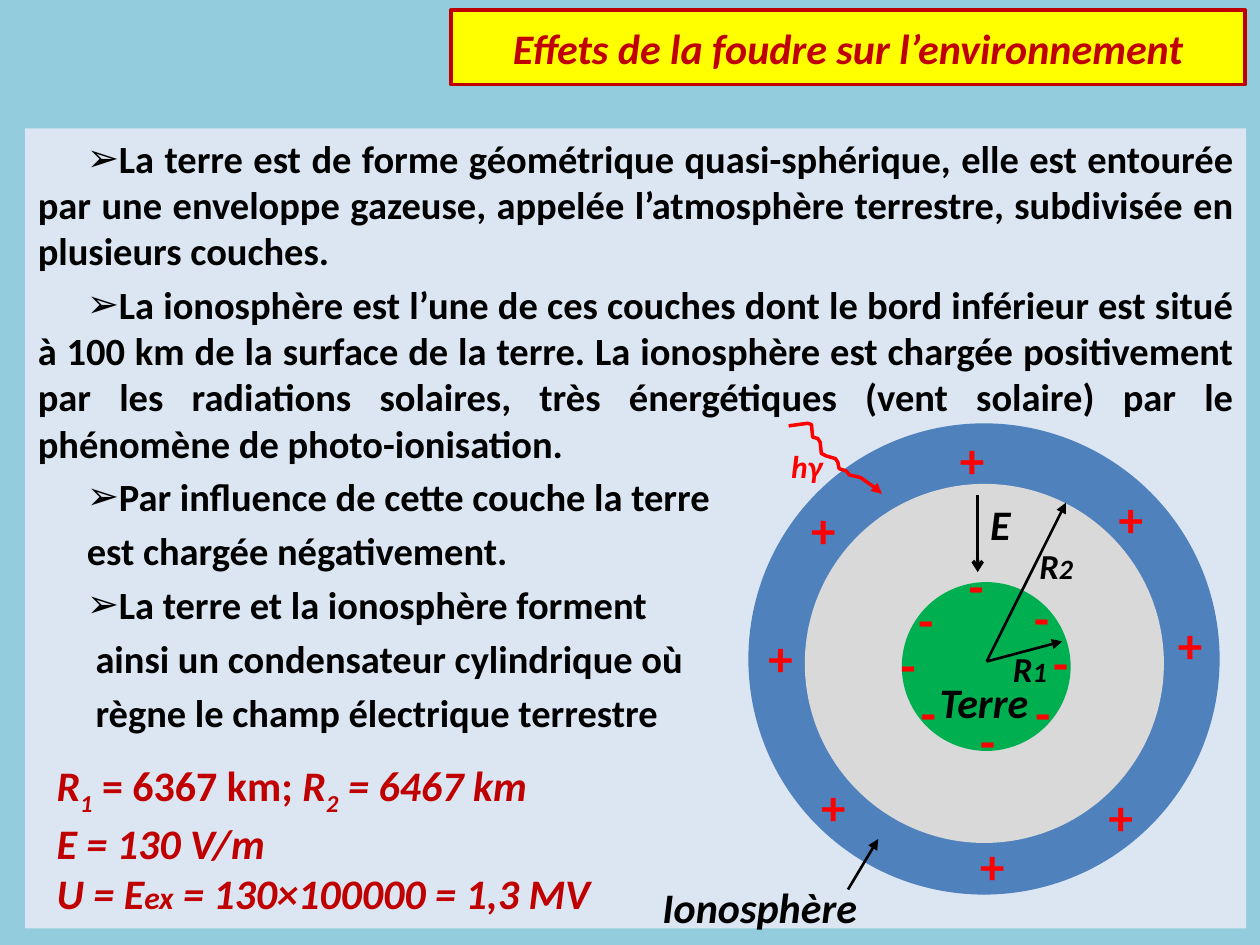
import pptx
import pptx.dml.color
import pptx.enum.shapes
import pptx.enum.text
import pptx.util
from lxml import etree
from pptx.oxml.ns import qn

Pt = pptx.util.Pt
RGBColor = pptx.dml.color.RGBColor
MSO_SHAPE = pptx.enum.shapes.MSO_SHAPE
PP_ALIGN = pptx.enum.text.PP_ALIGN
MSO_ANCHOR = pptx.enum.text.MSO_ANCHOR

SKY = RGBColor(0x93, 0xCD, 0xDD)
PANEL = RGBColor(0xDC, 0xE6, 0xF2)
YELLOW = RGBColor(0xFF, 0xFF, 0x00)
DARK_RED = RGBColor(0xC0, 0x00, 0x00)
RED = RGBColor(0xFF, 0x00, 0x00)
BLUE = RGBColor(0x4F, 0x81, 0xBD)
GREY = RGBColor(0xD9, 0xD9, 0xD9)
GREEN = RGBColor(0x00, 0xB0, 0x50)
BLACK = RGBColor(0x00, 0x00, 0x00)


def write(p, text, size=24, color=BLACK, italic=True, baseline=None):
    r = p.add_run()
    r.text = text
    r.font.name = "Calibri"
    r.font.size = Pt(size)
    r.font.bold = True
    r.font.italic = italic
    r.font.color.rgb = color
    if baseline:
        r.font._element.set("baseline", str(baseline * 1000))


def place(sp, x, y, w, h):
    sp.left, sp.top, sp.width, sp.height = Pt(x), Pt(y), Pt(w), Pt(h)
    tf = sp.text_frame
    tf.word_wrap = True
    tf.auto_size = pptx.enum.text.MSO_AUTO_SIZE.NONE
    return tf


prs = pptx.Presentation()
prs.slide_width, prs.slide_height = Pt(720), Pt(540)
s = prs.slides.add_slide(prs.slide_layouts[0])
s.background.fill.solid()
s.background.fill.fore_color.rgb = SKY

# Title
title = s.shapes.title
tf = place(title, 257.8, 5.8, 453.6, 42.5)
tf.vertical_anchor = MSO_ANCHOR.MIDDLE
title.fill.solid()
title.fill.fore_color.rgb = YELLOW
title.line.color.rgb = DARK_RED
title.line.width = Pt(2.25)
p = tf.paragraphs[0]
p.alignment = PP_ALIGN.CENTER
write(p, "Effets de la foudre sur l’environnement", color=DARK_RED)

# Body: bullet flag, first-line indent, text
body = s.placeholders[1]
tf = place(body, 14.4, 73.4, 697.7, 457.2)
body.fill.solid()
body.fill.fore_color.rgb = PANEL
lines = [
    (True, 28, "La terre est de forme géométrique quasi-sphérique, elle est entourée par une "
     "enveloppe gazeuse, appelée l’atmosphère terrestre, subdivisée en plusieurs couches."),
    (True, 28, "La ionosphère est l’une de ces couches dont le bord inférieur est situé à 100 km "
     "de la surface de la terre. La ionosphère est chargée positivement par les radiations "
     "solaires, très énergétiques (vent solaire) par le phénomène de photo-ionisation."),
    (True, 28, "Par influence de cette couche la terre"),
    (False, 28, "est chargée négativement."),
    (True, 28, "La terre et la ionosphère forment"),
    (False, 33, "ainsi un condensateur cylindrique où"),
    (False, 33, "règne le champ électrique terrestre"),
]
for i, (bullet, indent, text) in enumerate(lines):
    p = tf.add_paragraph() if i else tf.paragraphs[0]
    p.alignment = PP_ALIGN.JUSTIFY
    p.space_before = Pt(4.4)
    pPr = p._p.get_or_add_pPr()
    pPr.set("marL", "0")
    pPr.set("indent", str(Pt(indent)))
    if bullet:
        etree.SubElement(pPr, qn("a:buChar")).set("char", "➢")
    write(p, text, size=22, italic=False)

# Values: runs of text with their own format
values = [
    [("R", {}), ("1", {"baseline": -25}), (" = 6367 km; ", {"italic": False}),
     ("R", {}), ("2", {"baseline": -25}), (" = 6467 km", {})],
    [("E = 130 V/m", {})],
    [("U = E", {}), ("ex", {"size": 18}), (" = 130×100000 = 1,3 MV", {})],
]
tf = place(s.shapes.add_textbox(0, 0, 0, 0), 25.2, 430.6, 334.8, 94.3)
for i, runs in enumerate(values):
    p = tf.add_paragraph() if i else tf.paragraphs[0]
    for text, style in runs:
        write(p, text, color=DARK_RED, **style)

# Ionosphere, atmosphere and Earth: centre, diameter, colour
for cx, cy, d, color in [(562.3, 376.6, 269.3, BLUE), (562.5, 379.1, 205.2, GREY),
                         (563.6, 380.9, 96.5, GREEN)]:
    sp = s.shapes.add_shape(MSO_SHAPE.OVAL, Pt(cx - d / 2), Pt(cy - d / 2), Pt(d), Pt(d))
    sp.shadow.inherit = False
    sp.fill.solid()
    sp.fill.fore_color.rgb = color
    sp.line.fill.background()

# Solar ray
ray = [(450.7, 243.4), (456.5, 242.6), (461.5, 241.9), (463.7, 242.6), (464.4, 249.8),
       (467.3, 250.6), (468.7, 252.7), (469.4, 259.2), (472.3, 260.6), (477.4, 262.1),
       (478.8, 264.2), (479.5, 267.8), (483.8, 269.3), (485.3, 271.4), (491.8, 272.9),
       (496.8, 276.5), (501.1, 279.4), (504, 282.2)]
points = [(Pt(x), Pt(y)) for x, y in ray]
fb = s.shapes.build_freeform(*points[0])
fb.add_line_segments(points[1:], close=False)
sp = fb.convert_to_shape()
sp.shadow.inherit = False
sp.fill.background()
arrows = [(sp, RED, 2, "triangle")]

# Charges
plus = [(541.4, 241.9), (553, 473.8), (432, 355), (456.5, 282.2),
        (462.2, 439.9), (632.2, 275.8), (626.4, 445.7), (666, 347.8)]
minus = [(546.5, 313.9), (553, 402.5), (594.7, 357.8), (507.6, 359.3),
         (583.9, 331.9), (584.6, 386.6), (517.7, 333.4), (519.1, 386.6)]
for sign, spots in [("+", plus), ("-", minus)]:
    for x, y in spots:
        tf = place(s.shapes.add_textbox(0, 0, 0, 0), x, y, 45.4, 41)
        write(tf.paragraphs[0], sign, size=28, color=RED, italic=False)

# Labels: text, index, position, width, height, size, colour
labels = [
    ("hγ", "", 445, 252, 45.4, 28.8, 18, RED),
    ("Terre", "", 529.9, 383, 73.4, 36, 24, BLACK),
    ("Ionosphère", "", 371.5, 500.4, 158.4, 36, 24, BLACK),
    ("E", "", 558.7, 281.5, 33.8, 36, 24, BLACK),
    ("R", "2", 586.8, 307.4, 45.4, 31.7, 20, BLACK),
    ("R", "1", 571.7, 366.5, 45.4, 31.7, 20, BLACK),
]
for text, index, x, y, w, h, size, color in labels:
    p = place(s.shapes.add_textbox(0, 0, 0, 0), x, y, w, h).paragraphs[0]
    write(p, text, size=size, color=color)
    if index:
        write(p, index, size=16, color=color)

# Field, radii and ionosphere pointer
for x1, y1, x2, y2, width, head in [(558.7, 283, 558.7, 326.9, 2, "arrow"),
                                    (563.8, 378, 609.1, 287.3, 1.5, "triangle"),
                                    (563.8, 378, 607, 366.5, 1.5, "triangle"),
                                    (484.6, 508.3, 501.8, 479.5, 1.5, "triangle")]:
    sp = s.shapes.add_connector(pptx.enum.shapes.MSO_CONNECTOR.STRAIGHT,
                                Pt(x1), Pt(y1), Pt(x2), Pt(y2))
    arrows.append((sp, BLACK, width, head))

# Line format and arrowheads
for sp, color, width, head in arrows:
    sp.line.color.rgb = color
    sp.line.width = Pt(width)
    etree.SubElement(sp.line._get_or_add_ln(), qn("a:tailEnd")).set("type", head)
    spPr = sp._element.spPr
    if spPr.find(qn("a:effectLst")) is None:
        etree.SubElement(spPr, qn("a:effectLst"))

prs.save("out.pptx")
